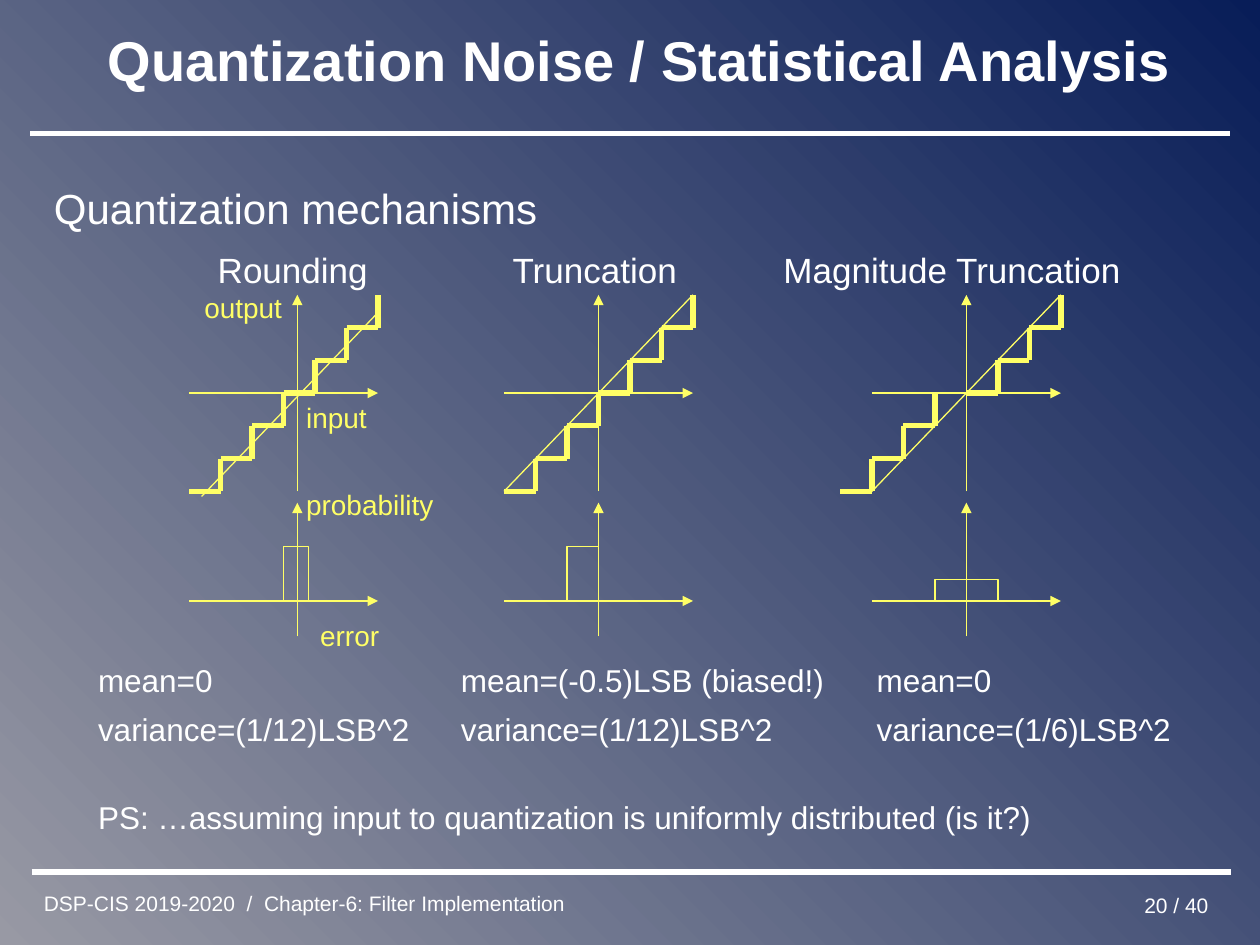
from dataclasses import dataclass

from lxml import etree
from pptx import Presentation
from pptx.dml.color import RGBColor
from pptx.enum.shapes import MSO_CONNECTOR, MSO_SHAPE
from pptx.enum.text import MSO_ANCHOR, PP_ALIGN
from pptx.oxml.ns import qn
from pptx.util import Inches, Pt

LEFT, CENTER, RIGHT = PP_ALIGN.LEFT, PP_ALIGN.CENTER, PP_ALIGN.RIGHT
MIDDLE = MSO_ANCHOR.MIDDLE
STRAIGHT = MSO_CONNECTOR.STRAIGHT
RECTANGLE = MSO_SHAPE.RECTANGLE


@dataclass(frozen=True)
class Theme:
    font: str = "Arial"
    white: RGBColor = RGBColor(0xFF, 0xFF, 0xFF)
    yellow: RGBColor = RGBColor(0xFF, 0xFF, 0x66)
    back_light: RGBColor = RGBColor(0x98, 0x99, 0xA4)
    back_dark: RGBColor = RGBColor(0x08, 0x1D, 0x58)
    title: int = 32
    heading: int = 24
    column: int = 20
    body: int = 18
    label: int = 16
    footer: int = 12
    thick: float = 3
    thin: float = 0.75


THEME = Theme()

# Shared geometry of the three diagrams, in inches
STEP_WIDTH, STEP_HEIGHT, STEPS = 0.25, 0.26, 3
AXIS_LENGTH = 1.5
INPUT_Y, OUTPUT_TOP, OUTPUT_BOTTOM = 3.12, 2.34, 3.9
ERROR_Y, PROBABILITY_TOP, PROBABILITY_BOTTOM = 4.77, 3.99, 5.05

# Column heading with its left edge and width, and the results with theirs
COLUMNS = [
    ("Rounding", 1.63, 1.6, ["mean=0", "variance=(1/12)LSB^2"], 0.68),
    ("Truncation", 3.97, 1.6,
     ["mean=(-0.5)LSB (biased!)", "variance=(1/12)LSB^2"], 3.56),
    ("Magnitude Truncation", 6.12, 3, ["mean=0", "variance=(1/6)LSB^2"], 6.86),
]

# Axis start, vertical axis, stair starts, ideal line, error bars (left, width, height)
DIAGRAMS = [
    dict(axis_left=1.5, origin=2.36, stairs=(1.5, 2.25),
         ideal=((1.6, 3.94), (3.01, 2.47)), bars=[(2.25, 0.2, 0.43)]),
    dict(axis_left=4, origin=4.75, stairs=(4, 4.75),
         ideal=((4, 3.9), (5.5, 2.34)), bars=[(4.5, 0.25, 0.43)]),
    dict(axis_left=6.92, origin=7.67, stairs=(6.67, 7.67),
         ideal=((6.92, 3.9), (8.42, 2.34)),
         bars=[(7.42, 0.25, 0.17), (7.67, 0.25, 0.17)]),
]

AXIS_LABELS = [
    ("output", 1.52, 2.25, 0.82),
    ("input", 2.33, 3.12, 0.68),
    ("probability", 2.33, 3.81, 1.21),
    ("error", 2.44, 4.85, 0.67),
]


def add_text(slide, text, left, top, width, height, *, size, color=THEME.white,
             bold=False, align=LEFT, wrap=True, line_spacing=None, gap=0):
    """Add a text box; a list of strings gives one paragraph each."""
    box = slide.shapes.add_textbox(Inches(left), Inches(top),
                                   Inches(width), Inches(height))
    frame = box.text_frame
    frame.word_wrap = wrap
    frame.vertical_anchor = MIDDLE
    lines = [text] if isinstance(text, str) else text
    for index, line in enumerate(lines):
        para = frame.add_paragraph() if index else frame.paragraphs[0]
        para.alignment = align
        para.space_before = Pt(gap if index else 0)
        if line_spacing:
            para.line_spacing = line_spacing
        span = para.add_run()
        span.text = line
        span.font.name = THEME.font
        span.font.size = Pt(size)
        span.font.bold = bold
        span.font.color.rgb = color


def add_line(shapes, start, end, *, color=THEME.yellow, weight=THEME.thin,
             arrow=False):
    points = [Inches(value) for value in (*start, *end)]
    line = shapes.add_connector(STRAIGHT, *points)
    line.line.color.rgb = color
    line.line.width = Pt(weight)
    properties = line.line._get_or_add_ln()
    if arrow:
        etree.SubElement(properties, qn("a:tailEnd"), type="triangle")
    etree.SubElement(properties.getparent(), qn("a:effectLst"))


def add_stairs(shapes, left, bottom):
    for step in range(STEPS):
        x = left + step * STEP_WIDTH
        y = bottom - step * STEP_HEIGHT
        corner = (x + STEP_WIDTH, y)
        add_line(shapes, (x, y), corner, weight=THEME.thick)
        add_line(shapes, corner, (x + STEP_WIDTH, y - STEP_HEIGHT),
                 weight=THEME.thick)


def add_bar(shapes, left, width, height):
    bar = shapes.add_shape(RECTANGLE, Inches(left), Inches(ERROR_Y - height),
                           Inches(width), Inches(height))
    bar.shadow.inherit = False
    bar.fill.background()
    bar.line.color.rgb = THEME.yellow
    bar.line.width = Pt(THEME.thin)


def add_diagram(slide, axis_left, origin, stairs, ideal, bars):
    shapes = slide.shapes.add_group_shape().shapes
    # Quantizer characteristic
    for left, bottom in zip(stairs, (OUTPUT_BOTTOM, INPUT_Y)):
        add_stairs(shapes, left, bottom)
    add_line(shapes, *ideal)
    # Axes of both plots
    for y in (INPUT_Y, ERROR_Y):
        add_line(shapes, (axis_left, y), (axis_left + AXIS_LENGTH, y), arrow=True)
    for bottom, top in ((OUTPUT_BOTTOM, OUTPUT_TOP),
                        (PROBABILITY_BOTTOM, PROBABILITY_TOP)):
        add_line(shapes, (origin, bottom), (origin, top), arrow=True)
    # Error distribution
    for bar in bars:
        add_bar(shapes, *bar)


def add_background(slide):
    fill = slide.background.fill
    fill.gradient()
    fill.gradient_angle = 45
    for stop, color in zip(fill.gradient_stops,
                           (THEME.back_light, THEME.back_dark)):
        stop.color.rgb = color


def add_frame(slide):
    for left, right, y in ((0.24, 9.76, 1.06), (0.25, 9.77, 6.92)):
        add_line(slide.shapes, (left, y), (right, y),
                 color=THEME.white, weight=THEME.thick)
    add_text(slide, "DSP-CIS 2019-2020  /  Chapter-6: Filter Implementation",
             0.25, 7, 5, 0.33, size=THEME.footer)
    add_text(slide, "20 / 40", 7.69, 7, 2, 0.37, size=THEME.footer, align=RIGHT)


def main():
    deck = Presentation()
    deck.slide_width, deck.slide_height = Inches(10), Inches(7.5)
    page = deck.slides.add_slide(deck.slide_layouts[6])
    add_background(page)
    add_frame(page)

    # Title and headings
    add_text(page, "Quantization Noise / Statistical Analysis", 0.32, 0.1, 9.51,
             0.85, size=THEME.title, bold=True, align=CENTER, line_spacing=0.75)
    add_text(page, "Quantization mechanisms", 0.33, 1.4, 5, 0.5,
             size=THEME.heading)

    # Columns with their results
    for heading, left, width, results, results_left in COLUMNS:
        add_text(page, heading, left, 1.93, width, 0.41, size=THEME.column)
        add_text(page, results, results_left, 5.2, 3.1, 0.78,
                 size=THEME.body, gap=6, wrap=False)
    add_text(page, "PS: …assuming input to quantization is uniformly "
             "distributed (is it?)", 0.68, 6.28, 8.5, 0.4, size=THEME.body)

    # Diagrams and axis labels
    for diagram in DIAGRAMS:
        add_diagram(page, **diagram)
    for label, left, top, width in AXIS_LABELS:
        add_text(page, label, left, top, width, 0.38, size=THEME.label,
                 color=THEME.yellow, align=CENTER, wrap=False)

    deck.save("out.pptx")


if __name__ == "__main__":
    main()
